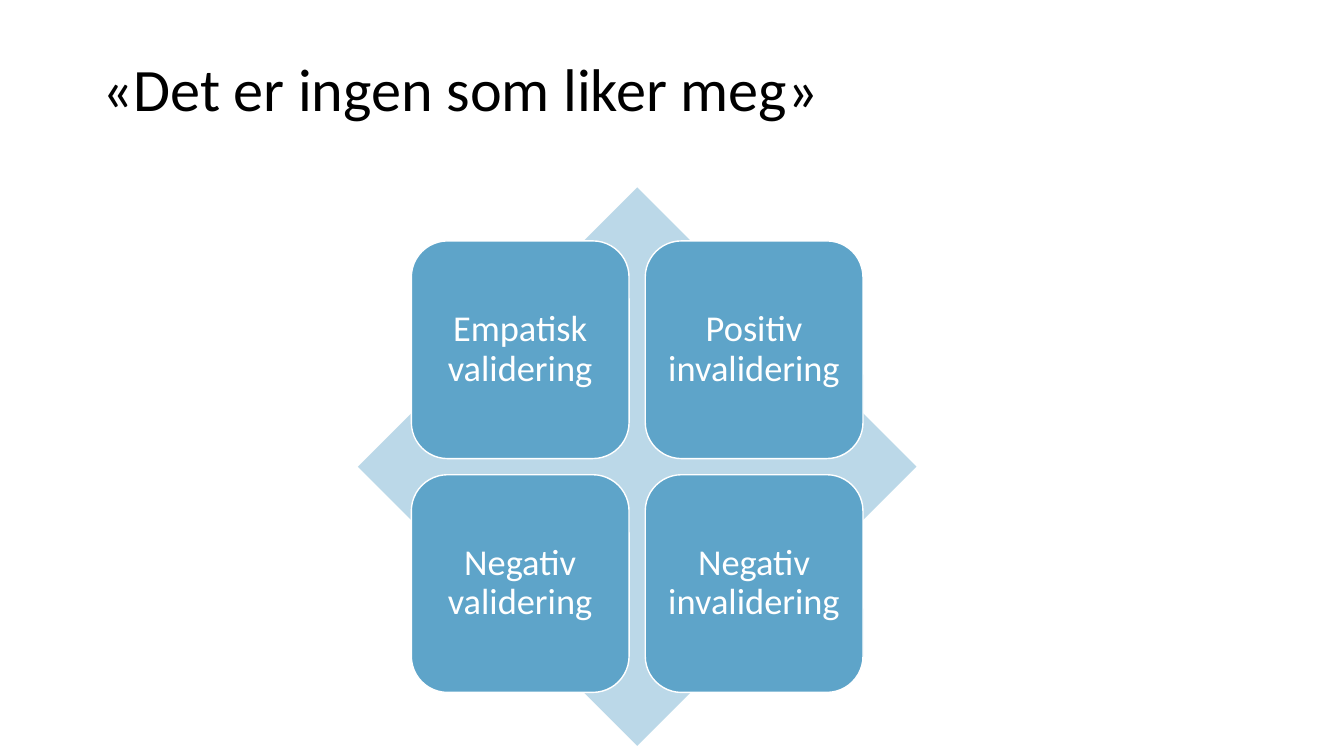
from dataclasses import dataclass

from lxml.etree import SubElement
from pptx import Presentation
from pptx.dml.color import RGBColor
from pptx.enum.shapes import MSO_SHAPE
from pptx.enum.text import MSO_ANCHOR, PP_ALIGN
from pptx.oxml.ns import qn
from pptx.shapes.autoshape import Shape
from pptx.slide import Slide
from pptx.text.text import TextFrame
from pptx.util import Emu, Pt

EMU_PER_PX = 9144  # 100 px to the inch
FONT = "Calibri"
BLACK, WHITE, BLUE = "000000", "FFFFFF", "5EA4C9"

CENTER_X, CENTER_Y = 632, 463
DIAMOND_SIZE = 554
TILE_SIZE = 216
TILE_GAP = 16
TILE_INSET = 21


@dataclass(frozen=True)
class Tile:
    row: int
    column: int
    label: str


TILES = [
    Tile(0, 0, "Empatisk validering"),
    Tile(0, 1, "Positiv invalidering"),
    Tile(1, 0, "Negativ validering"),
    Tile(1, 1, "Negativ invalidering"),
]


def px(length: int) -> Emu:
    return Emu(length * EMU_PER_PX)


def color(hex_value: str) -> RGBColor:
    return RGBColor.from_string(hex_value)


def write_text(frame: TextFrame, text: str, size: int, text_color: str,
               alignment: PP_ALIGN) -> None:
    frame.word_wrap = True
    frame.text = text
    paragraph = frame.paragraphs[0]
    paragraph.alignment = alignment
    paragraph.line_spacing = 0.9
    font = paragraph.runs[0].font
    font.name = FONT
    font.size = Pt(size)
    font.color.rgb = color(text_color)


def add_blue_square(slide: Slide, kind: MSO_SHAPE, left: int, top: int, size: int) -> Shape:
    shape = slide.shapes.add_shape(kind, px(left), px(top), px(size), px(size))
    shape.shadow.inherit = False
    shape.fill.solid()
    shape.fill.fore_color.rgb = color(BLUE)
    return shape


def add_title(slide: Slide) -> None:
    title = slide.shapes.add_textbox(px(92), px(52), px(933), px(134))
    frame = title.text_frame
    frame.vertical_anchor = MSO_ANCHOR.TOP
    frame.margin_top = px(7)
    write_text(frame, "«Det er ingen som liker meg»", 43, BLACK, PP_ALIGN.LEFT)


def add_diamond(slide: Slide) -> None:
    half = DIAMOND_SIZE // 2
    diamond = add_blue_square(slide, MSO_SHAPE.DIAMOND, CENTER_X - half, CENTER_Y - half,
                              DIAMOND_SIZE)
    diamond.line.fill.background()
    fill_color = diamond.fill._xPr.find(qn("a:solidFill"))[0]
    SubElement(fill_color, qn("a:alpha"), val="42000")


def add_tile(slide: Slide, tile: Tile) -> None:
    pitch = TILE_SIZE + TILE_GAP
    offset = TILE_SIZE + TILE_GAP // 2
    shape = add_blue_square(slide, MSO_SHAPE.ROUNDED_RECTANGLE,
                            CENTER_X - offset + tile.column * pitch,
                            CENTER_Y - offset + tile.row * pitch, TILE_SIZE)
    shape.line.color.rgb = color(WHITE)
    shape.line.width = Pt(1)
    # The rounded corners already inset the text area by 0.29 of their radius.
    corner_inset = round(TILE_SIZE * shape.adjustments[0] * 0.29)
    margin = px(TILE_INSET - corner_inset)
    frame = shape.text_frame
    frame.margin_left = frame.margin_right = margin
    frame.margin_top = frame.margin_bottom = margin
    frame.vertical_anchor = MSO_ANCHOR.MIDDLE
    write_text(frame, tile.label, 26, WHITE, PP_ALIGN.CENTER)
    frame.paragraphs[0].space_after = Pt(11)


def main() -> None:
    presentation = Presentation()
    presentation.slide_width = px(1333)
    presentation.slide_height = px(750)
    slide = presentation.slides.add_slide(presentation.slide_layouts[6])
    add_title(slide)
    add_diamond(slide)
    for tile in TILES:
        add_tile(slide, tile)
    presentation.save("out.pptx")


if __name__ == "__main__":
    main()
